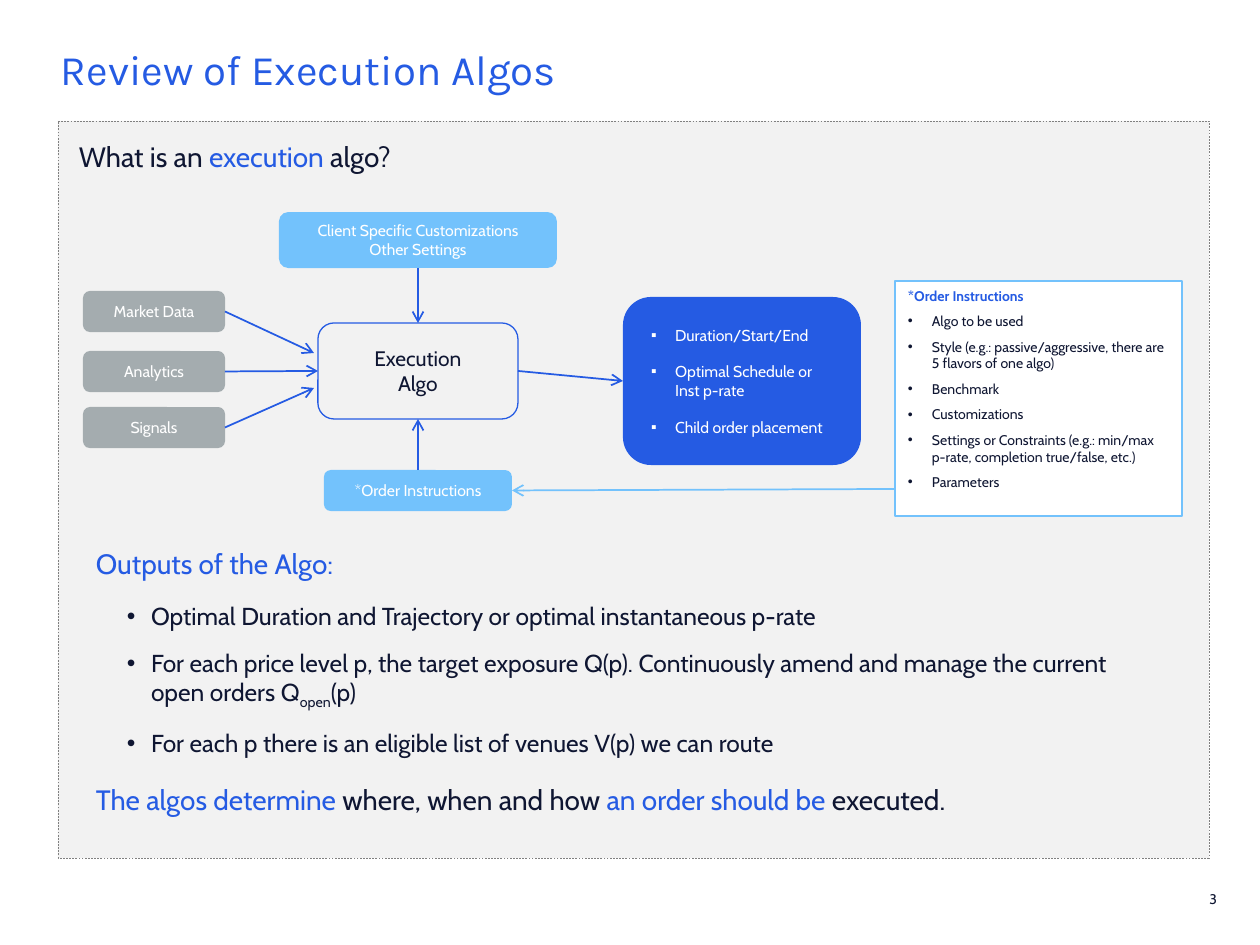
import pptx
import pptx.dml.color
import pptx.enum.dml
import pptx.enum.shapes
import pptx.enum.text
import pptx.util
from lxml import etree
from pptx.oxml.ns import qn

RGB = pptx.dml.color.RGBColor
NAVY = RGB(0x0F, 0x16, 0x32)
BLUE = RGB(0x25, 0x5B, 0xE3)
SKY = RGB(0x73, 0xC2, 0xFC)
GREY = RGB(0xA4, 0xAC, 0xAF)
PALE = RGB(0xF2, 0xF2, 0xF2)
EDGE = RGB(0x80, 0x80, 0x80)
WHITE = RGB(0xFF, 0xFF, 0xFF)

KIND = pptx.enum.shapes.MSO_SHAPE
ALIGN = pptx.enum.text.PP_ALIGN
ANCHOR = pptx.enum.text.MSO_ANCHOR
TOP, LEFT, BOTTOM, RIGHT = range(4)
SCALE = 914400 / 126


def px(n):
    return pptx.util.Emu(round(n * SCALE))


class Deck:
    font = "Cabin"

    def __init__(self, wide, high):
        self.show = pptx.Presentation()
        self.show.slide_width, self.show.slide_height = px(wide), px(high)
        self.slide = self.show.slides.add_slide(self.show.slide_layouts[6])

    def fill_text(self, shape, paras, size, color, inset=(0, 0), font=None, align=ALIGN.LEFT,
                  anchor=ANCHOR.TOP, before=0, after=0, bullet=None, leading=None):
        """Each paragraph is a string or a list of (text, color, baseline) runs."""
        frame = shape.text_frame
        frame.word_wrap = True
        frame.vertical_anchor = anchor
        frame.margin_left = frame.margin_right = px(inset[0])
        frame.margin_top = frame.margin_bottom = px(inset[1])
        for i, runs in enumerate(paras):
            para = frame.paragraphs[0] if i == 0 else frame.add_paragraph()
            para.alignment = align
            para.space_before = pptx.util.Pt(before if i else 0)
            para.space_after = pptx.util.Pt(after)
            if leading:
                para.line_spacing = leading
            if bullet:
                self.mark(para, bullet)
            para.font.name = font or self.font
            para.font.size = pptx.util.Pt(size)
            para.font.color.rgb = color
            for text, tint, base in [(runs, None, 0)] if isinstance(runs, str) else runs:
                run = para.add_run()
                run.text = text
                if tint is not None:
                    run.font.color.rgb = tint
                if base:
                    run._r.get_or_add_rPr().set("baseline", str(base * 1000))
        return frame

    def mark(self, para, sign):
        props = para._p.get_or_add_pPr()
        props.set("marL", str(px(24)))
        props.set("indent", str(-px(24)))
        etree.SubElement(props, qn("a:buFont")).set("typeface", "Arial")
        etree.SubElement(props, qn("a:buChar")).set("char", sign)

    def text(self, box, paras, size, color, **style):
        shape = self.slide.shapes.add_textbox(*map(px, box))
        return self.fill_text(shape, paras, size, color, **style)

    def shape(self, kind, box, fill=None, line=None, width=1, dash=None):
        shape = self.slide.shapes.add_shape(kind, *map(px, box))
        shape.shadow.inherit = False
        if fill is None:
            shape.fill.background()
        else:
            shape.fill.solid()
            shape.fill.fore_color.rgb = fill
        if line is None:
            shape.line.fill.background()
        else:
            shape.line.color.rgb = line
            shape.line.width = pptx.util.Pt(width)
            if dash:
                shape.line.dash_style = dash
        return shape

    def node(self, box, paras, size=9, color=WHITE, fill=None, line=None, width=1, **style):
        shape = self.shape(KIND.ROUNDED_RECTANGLE, box, fill, line, width)
        style = {"align": ALIGN.CENTER, **style}
        self.fill_text(shape, paras, size, color, inset=(20, 20), anchor=ANCHOR.MIDDLE, **style)
        return shape

    def arrow(self, start, end, color=BLUE):
        """Each end is a point (x, y) or a joint (shape, side)."""
        line = self.slide.shapes.add_connector(pptx.enum.shapes.MSO_CONNECTOR.STRAIGHT, 0, 0, 0, 0)
        if isinstance(start[0], int):
            line.begin_x, line.begin_y = map(px, start)
        else:
            line.begin_connect(*start)
        if isinstance(end[0], int):
            line.end_x, line.end_y = map(px, end)
        else:
            line.end_connect(*end)
        line.line.color.rgb = color
        line.line.width = pptx.util.Pt(1)
        etree.SubElement(line.line._get_or_add_ln(), qn("a:tailEnd")).set("type", "arrow")
        etree.SubElement(line._element.spPr, qn("a:effectLst"))


def main():
    deck = Deck(1260, 945)

    # Backdrop, page number and title
    deck.shape(KIND.RECTANGLE, (58, 121, 1151, 737), PALE, EDGE, 0.25,
               pptx.enum.dml.MSO_LINE.DASH)
    deck.text((1189, 874, 28, 50), ["3"], 8, NAVY, align=ALIGN.RIGHT, anchor=ANCHOR.MIDDLE)
    deck.text((61, 49, 1199, 67), ["Review of Execution Algos"], 24, BLUE,
              font="Karla", leading=0.9)

    # Headings
    head = {"inset": (13, 6), "after": 5}
    deck.text((66, 134, 721, 47), [[("What is an ", None, 0), ("execution", BLUE, 0),
                                    (" algo?", None, 0)]], 16, NAVY, **head)
    deck.text((83, 541, 721, 47), ["Outputs of the Algo:"], 16, BLUE, **head)
    deck.text((83, 777, 946, 47), [[("The algos determine ", BLUE, 0),
                                    ("where, when and how", None, 0),
                                    (" an order should be ", BLUE, 0),
                                    ("executed.", None, 0)]], 16, NAVY, **head)

    # Flow boxes
    algo = deck.node((318, 323, 200, 96), ["Execution", "Algo"], 12, NAVY, line=BLUE, width=0.75)
    feeds = [deck.node((83, y, 142, 41), [name], fill=GREY)
             for name, y in (("Market Data", 291), ("Analytics", 351), ("Signals", 407))]
    client = deck.node((279, 212, 278, 56), ["Client Specific Customizations", "Other Settings"],
                       fill=SKY)
    order = deck.node((324, 470, 188, 41), ["*Order Instructions"], fill=SKY)
    result = deck.node((623, 297, 238, 168),
                       ["Duration/Start/End", "Optimal Schedule or Inst p-rate",
                        "Child order placement"],
                       fill=BLUE, align=ALIGN.LEFT, bullet="▪", before=5, after=5)

    # Order details
    panel = deck.shape(KIND.RECTANGLE, (895, 281, 287, 235), WHITE, SKY)
    frame = deck.fill_text(panel, ["*Order Instructions"], 8, BLUE, inset=(13, 6), after=5)
    frame.paragraphs[0].font.bold = True
    for item in ("Algo to be used",
                 "Style (e.g.: passive/aggressive, there are 5 flavors of one algo)",
                 "Benchmark", "Customizations",
                 "Settings or Constraints (e.g.: min/max p-rate, completion true/false, etc.)",
                 "Parameters"):
        para = frame.add_paragraph()
        para.text = item
        para.alignment = ALIGN.LEFT
        para.space_after = pptx.util.Pt(5)
        deck.mark(para, "•")
        para.font.name, para.font.size = deck.font, pptx.util.Pt(8)
        para.font.color.rgb = NAVY

    # Arrows
    for feed, end in zip(feeds, ((314, 353), (algo, LEFT), (314, 388))):
        deck.arrow((feed, RIGHT), end)
    deck.arrow((client, BOTTOM), (algo, TOP))
    deck.arrow((order, TOP), (algo, BOTTOM))
    deck.arrow((algo, RIGHT), (result, LEFT))
    deck.arrow((895, 489), (order, RIGHT), SKY)

    # Outputs
    deck.text((127, 601, 1002, 159),
              ["Optimal Duration and Trajectory or optimal instantaneous p-rate",
               [("For each price level p, the target exposure Q(p). Continuously amend "
                 "and manage the current open orders Q", None, 0),
                ("open", None, -25), ("(p)", None, 0)],
               "For each p there is an eligible list of venues V(p) we can route"],
              14, NAVY, bullet="•", before=5, after=5)

    deck.show.save("out.pptx")


if __name__ == "__main__":
    main()
